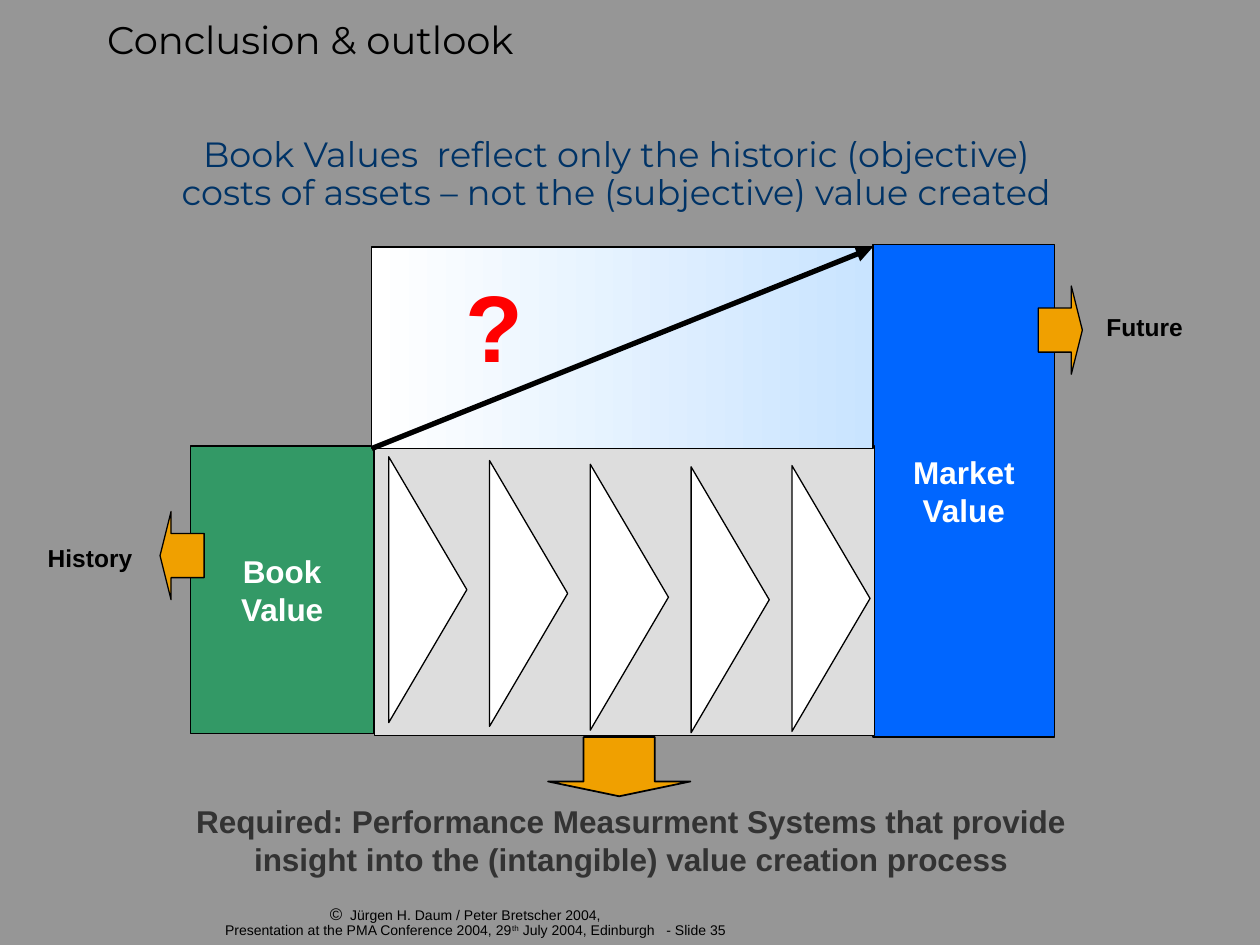
from lxml.etree import SubElement
from pptx import Presentation
from pptx.dml.color import RGBColor
from pptx.enum.shapes import MSO_CONNECTOR, MSO_SHAPE
from pptx.enum.text import MSO_ANCHOR, PP_ALIGN
from pptx.oxml.ns import qn
from pptx.util import Inches, Pt

COLORS = {
    "background": "969696", "ink": "000000", "navy": "003366", "white": "FFFFFF",
    "green": "339966", "blue": "0066FF", "grey": "DDDDDD", "sky": "C9E4FF",
    "amber": "F0A000", "red": "FF0000", "charcoal": "333333",
}
FORMATS = {
    "title": {"name": "Montserrat", "size": Pt(22), "color": "ink"},
    "subtitle": {"name": "Montserrat", "size": Pt(20), "color": "navy"},
    "value": {"name": "Arial", "size": Pt(18), "bold": True, "color": "white"},
    "time": {"name": "Arial", "size": Pt(14), "bold": True, "color": "ink"},
    "question": {"name": "Arial", "size": Pt(54), "bold": True, "color": "red"},
    "conclusion": {"name": "Arial", "size": Pt(18), "bold": True, "color": "charcoal"},
    "footer": {"name": "Arial", "size": Pt(8), "color": "ink"},
}


def rgb(color):
    """Return the named palette colour."""
    return RGBColor.from_string(COLORS[color])


def format_text(paragraph, style):
    """Apply a named format to every run and line break."""
    for run in paragraph.runs:
        for attribute, value in FORMATS[style].items():
            if attribute == "color":
                run.font.color.rgb = rgb(value)
            else:
                setattr(run.font, attribute, value)
    size = str(int(FORMATS[style]["size"].pt * 100))
    for line_break in paragraph._p.findall(qn("a:br")):
        SubElement(line_break, qn("a:rPr"), sz=size)


def add_text(slide, box, text, style, align=PP_ALIGN.CENTER):
    """Add a wrapped text box and return its text frame."""
    frame = slide.shapes.add_textbox(*map(Inches, box)).text_frame
    frame.word_wrap = True
    paragraph = frame.paragraphs[0]
    paragraph.text = text
    paragraph.alignment = align
    format_text(paragraph, style)
    return frame


def tighten(frame, indent, hanging=0):
    """Remove the margins, centre vertically and indent the paragraph."""
    for side in ("left", "top", "right", "bottom"):
        setattr(frame, f"margin_{side}", 0)
    frame.vertical_anchor = MSO_ANCHOR.MIDDLE
    paragraph = frame.paragraphs[0]
    paragraph.line_spacing = 0.9
    properties = paragraph._p.get_or_add_pPr()
    properties.set("marL", str(Inches(indent)))
    properties.set("indent", str(Inches(hanging)))


def add_block(slide, kind, box, color, line_width=0.75):
    """Add an outlined preset shape with a solid fill."""
    block = slide.shapes.add_shape(kind, *map(Inches, box))
    block.shadow.inherit = False
    block.fill.solid()
    block.fill.fore_color.rgb = rgb(color)
    block.line.color.rgb = rgb("ink")
    block.line.width = Pt(line_width)
    return block


def add_arrow(slide, kind, box, line_width=0.75):
    """Add an amber block arrow with a short head."""
    arrow = add_block(slide, kind, box, "amber", line_width)
    arrow.adjustments[0] = 0.5
    arrow.adjustments[1] = 0.25


def add_value(slide, box, color, label):
    """Add a value column with its label."""
    frame = add_block(slide, MSO_SHAPE.RECTANGLE, box, color).text_frame
    frame.word_wrap = False
    frame.vertical_anchor = MSO_ANCHOR.MIDDLE
    paragraph = frame.paragraphs[0]
    paragraph.text = label
    paragraph.alignment = PP_ALIGN.CENTER
    format_text(paragraph, "value")


def add_process(slide, left, top, width, height):
    """Add the value creation process with its five steps."""
    add_block(slide, MSO_SHAPE.RECTANGLE, (left, top, width, height), "grey")
    length, depth, pitch = 2.11, 0.62, 0.8
    for step, drop in enumerate((0.83, 0.86, 0.89, 0.91, 0.9)):
        box = (left - 0.63 + step * pitch, top + drop, length, depth)
        triangle = add_block(slide, MSO_SHAPE.ISOSCELES_TRIANGLE, box, "white")
        triangle.rotation = 90


def add_gap(slide, left, top, width, height):
    """Add the unexplained gap with its rising arrow."""
    box = (left, top, width, height)
    gap = add_block(slide, MSO_SHAPE.RECTANGLE, box, "white")
    gap.fill.gradient()
    gap.fill.gradient_angle = 0
    for stop, color, position in zip(gap.fill.gradient_stops, ("white", "sky"), (0, 1)):
        stop.color.rgb = rgb(color)
        stop.position = position
    ends = (left, top + height, left + width - 0.01, top + 0.01)
    rise = slide.shapes.add_connector(MSO_CONNECTOR.STRAIGHT, *map(Inches, ends))
    rise.line.color.rgb = rgb("ink")
    rise.line.width = Pt(3)
    SubElement(rise.line._get_or_add_ln(), qn("a:tailEnd"), type="triangle")
    SubElement(rise._element.spPr, qn("a:effectLst"))
    add_text(slide, (left + 0.21, top + 0.12, 1.52, 1), "?", "question")


def add_diagram(slide, left, top, width, height):
    """Add the bridge from book value to market value."""
    add_value(slide, (left, top + 1.6, 1.46, 2.28), "green", "Book\vValue")
    add_value(slide, (left + width - 1.44, top, 1.44, height), "blue", "Market\vValue")
    add_process(slide, left + 1.46, top + 1.6, 3.97, 2.3)
    add_gap(slide, left + 1.44, top + 0.02, 3.98, 1.6)
    add_arrow(slide, MSO_SHAPE.RIGHT_ARROW, (left + width - 0.13, top + 0.33, 0.35, 0.7))
    add_text(slide, (left + width + 0.05, top + 0.49, 1.33, 0.33), "Future", "time")
    add_arrow(slide, MSO_SHAPE.LEFT_ARROW, (left - 0.24, top + 2.12, 0.35, 0.7))
    add_text(slide, (left - 1.51, top + 2.32, 1.43, 0.33), "History", "time")


def add_heading(slide, left, top, width):
    """Add the title and the statement below it."""
    title = add_text(slide, (left + 0.66, top, 9, 0.42), "Conclusion & outlook",
                     "title", PP_ALIGN.LEFT)
    tighten(title, 0.19)
    statement = add_text(
        slide, (left, top + 1.03, width, 0.48),
        "Book Values  reflect only the historic (objective) \v"
        "costs of assets – not the (subjective) value created ", "subtitle")
    tighten(statement, 0.19)


def add_conclusion(slide, left, top, width, height):
    """Add the down arrow and the requirement it leads to."""
    add_arrow(slide, MSO_SHAPE.DOWN_ARROW, (left + 2.92, top, 1.13, 0.47), 1)
    add_text(slide, (left, top + 0.47, width, height - 0.47),
             "Required: Performance Measurment Systems that provide "
             "insight into the (intangible) value creation process", "conclusion")


def add_footer(slide, left, top, width, height):
    """Add the copyright line with its bullet and superscript."""
    frame = add_text(
        slide, (left, top, width, height),
        "Jürgen H. Daum / Peter Bretscher 2004,\v"
        "Presentation at the PMA Conference 2004, 29", "footer")
    tighten(frame, 0.16, -0.16)
    paragraph = frame.paragraphs[0]
    properties = paragraph._p.get_or_add_pPr()
    SubElement(properties, qn("a:buSzPct"), val="120000")
    SubElement(properties, qn("a:buFont"), typeface="Arial")
    SubElement(properties, qn("a:buChar"), char="©")
    for text, baseline in (("th", "30000"), (" July 2004, Edinburgh   - Slide 35", "0")):
        run = paragraph.add_run()
        run.text = text
        run._r.get_or_add_rPr().set("baseline", baseline)
    for line_break in paragraph._p.findall(qn("a:br")):
        line_break.clear()
    format_text(paragraph, "footer")


def main():
    """Build the slide and save it."""
    presentation = Presentation()
    presentation.slide_width = Inches(10)
    presentation.slide_height = Inches(7.5)
    slide = presentation.slides.add_slide(presentation.slide_layouts[6])
    slide.background.fill.solid()
    slide.background.fill.fore_color.rgb = rgb("background")
    add_footer(slide, 1.53, 7.21, 4.33, 0.24)
    add_heading(slide, 0, 0.12, 9.67)
    add_diagram(slide, 1.51, 1.94, 6.86, 3.91)
    add_conclusion(slide, 1.43, 5.85, 7.16, 1.17)
    presentation.save("out.pptx")


if __name__ == "__main__":
    main()
